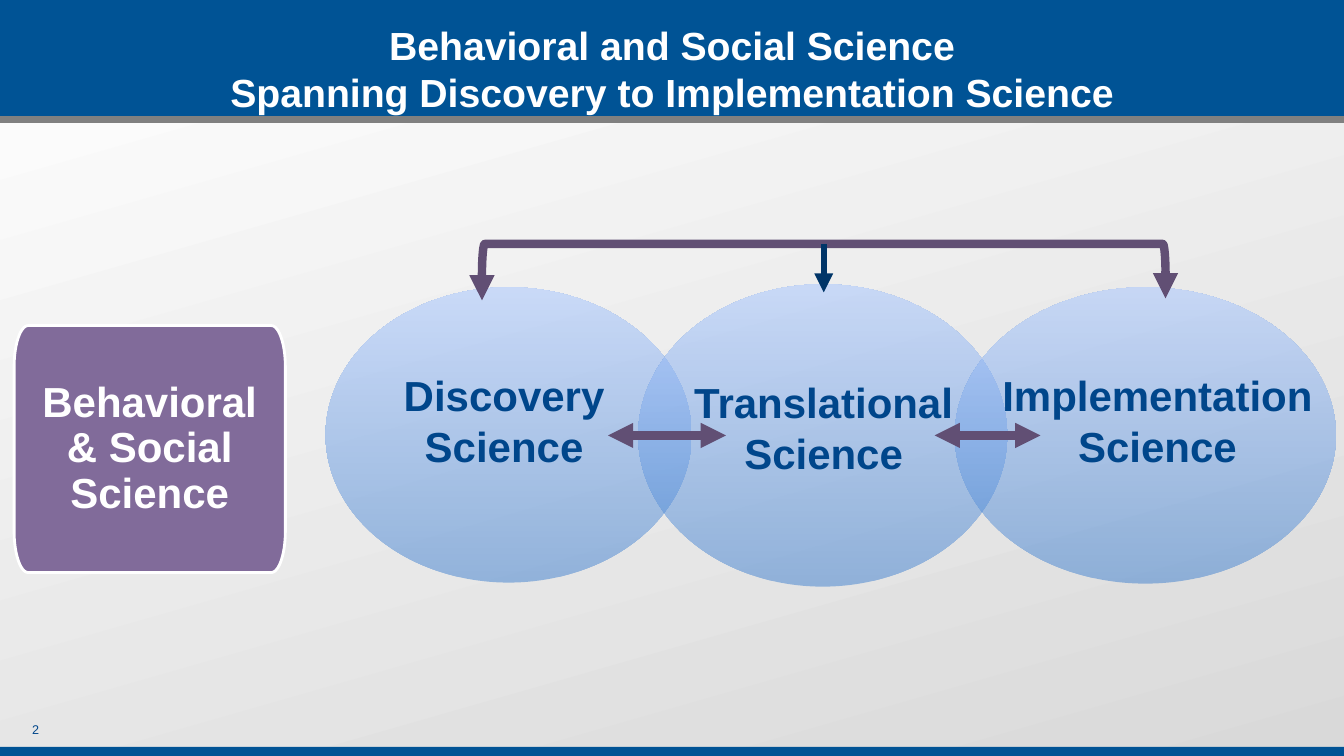
from math import cos, sin, radians
from lxml.etree import SubElement
from pptx import Presentation
from pptx.dml.color import RGBColor
from pptx.enum.shapes import MSO_CONNECTOR, MSO_SHAPE
from pptx.enum.text import MSO_ANCHOR, PP_ALIGN
from pptx.oxml.ns import qn
from pptx.util import Inches, Pt

BLUE, NAVY, PLUM = "005395", "00468B", "614F74"


def color(code):
    return RGBColor.from_string(code)


def shade(fill, codes, angle):
    """Blend two colours; the angle runs counter-clockwise."""
    fill.gradient()
    fill.gradient_angle = angle
    for stop, code in zip(fill.gradient_stops, codes):
        stop.color.rgb = color(code)


def write(shape, text, size, code, bold=True, align=PP_ALIGN.CENTER,
          anchor=MSO_ANCHOR.TOP):
    frame = shape.text_frame
    frame.word_wrap = True
    frame.vertical_anchor = anchor
    frame.text = text
    for para in frame.paragraphs:
        para.alignment = align
        for run in para.runs:
            run.font.name = "Arial"
            run.font.size = Pt(size)
            run.font.bold = bold
            run.font.color.rgb = color(code)
    return frame


def add_text(slide, box, *args, **style):
    shape = slide.shapes.add_textbox(*map(Inches, box))
    return write(shape, *args, **style)


def add_bar(slide, top, height):
    bar = slide.shapes.add_shape(MSO_SHAPE.RECTANGLE, 0, Inches(top),
                                 Inches(13.33), Inches(height))
    bar.shadow.inherit = False
    bar.fill.solid()
    bar.fill.fore_color.rgb = color(BLUE)
    bar.line.fill.background()


def add_oval(slide, box):
    oval = slide.shapes.add_shape(MSO_SHAPE.OVAL, *map(Inches, box))
    oval.shadow.inherit = False
    oval.line.fill.background()
    shade(oval.fill, ("3D7FCF", "A4C4FF"), 90)
    for tone in oval.fill._xPr.iter(qn("a:srgbClr")):
        SubElement(tone, qn("a:alpha"), val="50000")


def add_line(slide, start, end, code, width, ends=()):
    line = slide.shapes.add_connector(MSO_CONNECTOR.STRAIGHT,
                                      *map(Inches, start + end))
    line.line.color.rgb = color(code)
    line.line.width = Pt(width)
    for end_tag in ends:
        SubElement(line.line._get_or_add_ln(), qn(end_tag), type="triangle")
    SubElement(line._element.spPr, qn("a:effectLst"))


def add_panel(slide, left, top, width, height, rx, ry):
    """Box whose corners are quarter ellipses."""
    right, low = left + width - rx, top + height - ry
    turns = [(right, low), (left + rx, low),
             (left + rx, top + ry), (right, top + ry)]
    points = [(Inches(x + rx * cos(radians(90 * i + step))),
               Inches(y + ry * sin(radians(90 * i + step))))
              for i, (x, y) in enumerate(turns) for step in range(0, 91, 6)]
    path = slide.shapes.build_freeform(*points[0])
    path.add_line_segments(points[1:], close=True)
    panel = path.convert_to_shape()
    panel.shadow.inherit = False
    panel.fill.solid()
    panel.fill.fore_color.rgb = color("816B9A")
    panel.line.color.rgb = color("FFFFFF")
    panel.line.width = Pt(2)
    frame = write(panel, "Behavioral & Social Science", 30, "FFFFFF",
                  anchor=MSO_ANCHOR.MIDDLE)
    frame.margin_left = frame.margin_right = Inches(0.17)
    frame.margin_top = frame.margin_bottom = Inches(0.17)
    frame.paragraphs[0].line_spacing = 0.9


def add_brace(slide, box):
    brace = slide.shapes.add_shape(MSO_SHAPE.LEFT_BRACKET, *map(Inches, box))
    brace.rotation = 90
    brace.shadow.inherit = False
    brace.fill.background()
    brace.line.color.rgb = color(PLUM)
    brace.line.width = Pt(6)


def main():
    deck = Presentation()
    deck.slide_width, deck.slide_height = Inches(13.33), Inches(7.5)
    slide = deck.slides.add_slide(deck.slide_layouts[6])
    shade(slide.background.fill, ("FFFFFF", "D9D9D9"), 286)

    # Header, footer and page number
    add_bar(slide, 0, 1.19)
    add_bar(slide, 7.41, 0.09)
    add_line(slide, (0, 1.19), (13.33, 1.19), "808080", 5)
    add_text(slide, (0.45, 0.21, 12.43, 0.93),
             "Behavioral and Social Science\v"
             "Spanning Discovery to Implementation Science",
             28, "FFFFFF", anchor=MSO_ANCHOR.MIDDLE)
    add_text(slide, (0.22, 7.11, 1.16, 0.23), "2", 9, NAVY,
             bold=False, align=PP_ALIGN.LEFT)

    # Overlapping stages, with their labels on top
    for box in ((3.23, 2.85, 3.63, 2.93), (6.33, 2.82, 3.66, 3),
                (9.47, 2.85, 3.78, 2.94)):
        add_oval(slide, box)
    add_panel(slide, 0.14, 3.23, 2.69, 2.45, 0.14, 0.41)
    for left, top, stage in ((9.62, 3.62, "Implementation"),
                             (3.14, 3.62, "Discovery"),
                             (6.31, 3.69, "Translational")):
        add_text(slide, (left, top, 3.72, 1.11), f"{stage} Science", 30, NAVY)

    # Two-way arrows between stages
    for start, end in ((6.03, 7.2), (9.27, 10.32)):
        add_line(slide, (start, 4.32), (end, 4.32), PLUM, 6,
                 ("a:headEnd", "a:tailEnd"))

    # Bracket with arrows down to each stage
    add_brace(slide, (8.01, -0.81, 0.32, 6.78))
    for x, top, low, code, width in ((4.78, 2.7, 2.98, PLUM, 6),
                                     (11.56, 2.69, 2.96, PLUM, 6),
                                     (8.17, 2.42, 2.9, "003568", 4.5)):
        add_line(slide, (x, top), (x, low), code, width, ("a:tailEnd",))

    deck.save("out.pptx")


if __name__ == "__main__":
    main()
